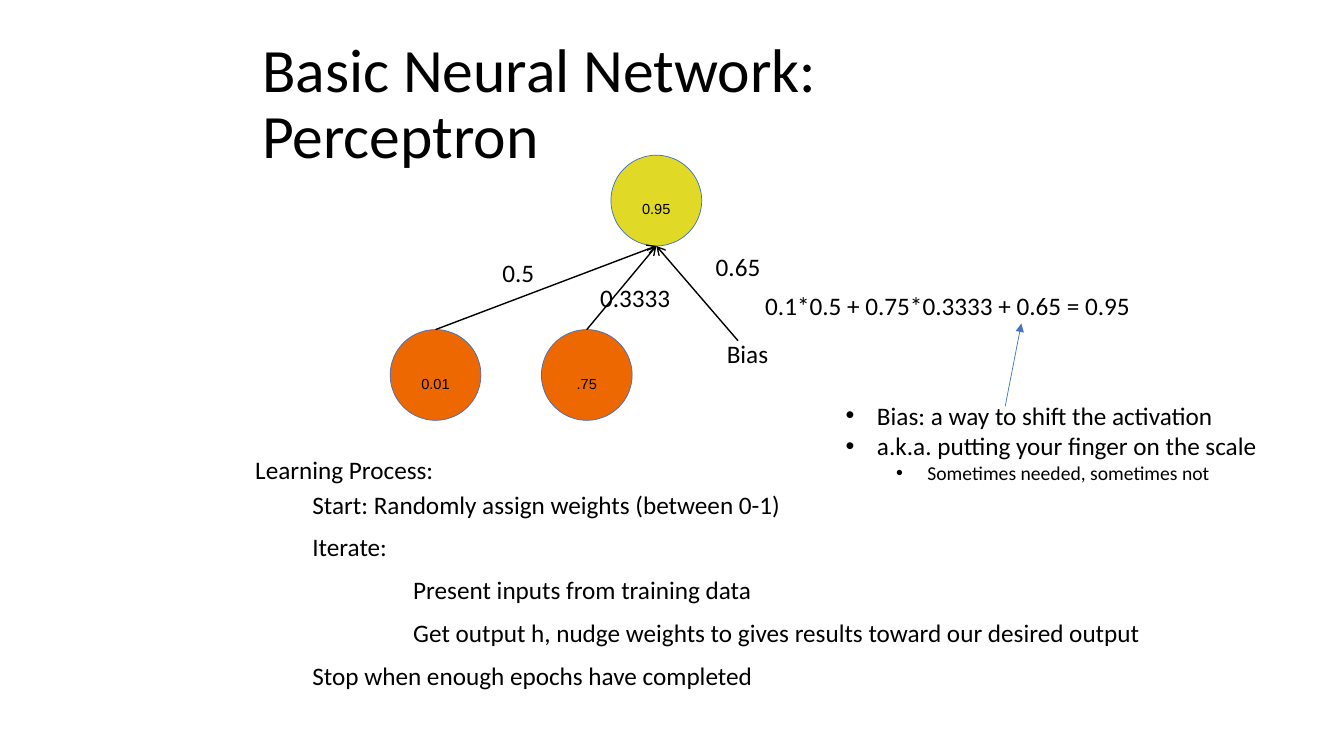
"""Build the perceptron slide: a small network, its bias note and the learning steps."""
from typing import NamedTuple

from lxml.etree import SubElement
from pptx import Presentation
from pptx.dml.color import RGBColor
from pptx.enum.shapes import MSO_CONNECTOR as Connector, MSO_SHAPE as Preset
from pptx.enum.text import MSO_ANCHOR as Anchor, PP_ALIGN as Align
from pptx.oxml.ns import qn
from pptx.util import Inches, Pt

BLACK, ORANGE, YELLOW = "000000", "EE6802", "E0D925"
DIAMETER = 0.9
OUTPUT_TIP = (6.51, 2.44)


class Line(NamedTuple):
    text: str
    size: float = 18
    indent: float = 0
    level: int = 0
    space_before: float = 0
    bullet: bool = False


class Label(NamedTuple):
    left: float
    top: float
    width: float
    height: float
    lines: list[Line]
    align: Align = Align.CENTER
    anchor: Anchor = Anchor.MIDDLE
    wrap: bool = False


class Neuron(NamedTuple):
    left: float
    top: float
    value: str
    fill: str


class Arrow(NamedTuple):
    start: tuple[float, float]
    end: tuple[float, float]
    color: str = BLACK
    width: float = 1
    head: str = "arrow"


LABELS = [
    Label(4.88, 2.5, 0.52, 0.4, [Line("0.5")]),
    Label(5.85, 2.75, 0.9, 0.4, [Line("0.3333")]),
    Label(6.87, 2.44, 0.9, 0.4, [Line("0.65")], wrap=True),
    Label(7.47, 2.83, 3.86, 0.4, [Line("0.1*0.5 + 0.75*0.3333 + 0.65 = 0.95")]),
    Label(7.11, 3.31, 0.62, 0.4, [Line("Bias")], Align.LEFT, Anchor.TOP),
    Label(2.42, 4.46, 1.99, 0.4, [Line("Learning Process:")]),
    Label(3, 4.74, 9.55, 2.22, [
        Line("Start: Randomly assign weights (between 0-1)"),
        Line("Iterate:", space_before=9),
        Line("Present inputs from training data", indent=1, space_before=9),
        Line("Get output h, nudge weights to gives results toward our desired output",
             indent=1, space_before=9),
        Line("Stop when enough epochs have completed", space_before=9),
    ], Align.LEFT, wrap=True),
    Label(8.29, 3.92, 4.33, 1.25, [
        Line("Bias: a way to shift the activation", indent=0.31, bullet=True),
        Line("a.k.a. putting your finger on the scale", indent=0.31, bullet=True),
        Line("Sometimes needed, sometimes not", 14, 0.81, 1, bullet=True),
    ], Align.LEFT, Anchor.TOP),
]
NEURONS = [
    Neuron(3.87, 3.27, "0.01", ORANGE),
    Neuron(6.06, 1.54, "0.95", YELLOW),
    Neuron(5.37, 3.27, ".75", ORANGE),
]
ARROWS = [
    Arrow((9.97, 4.03), (10.13, 3.21), "4472C4", 0.5, "triangle"),
    Arrow((4.32, 3.27), OUTPUT_TIP),
    Arrow((5.82, 3.27), OUTPUT_TIP),
    Arrow((7.32, 3.38), OUTPUT_TIP),
]


def color(value: str) -> RGBColor:
    """Turn a hex string into a colour."""
    return RGBColor.from_string(value)


def set_attributes(target, values: dict) -> None:
    """Set every named attribute on the target."""
    for name, value in values.items():
        setattr(target, name, value)


def add_run(paragraph, text: str, size: float, font: str = "Calibri"):
    """Add black text to a paragraph."""
    run = paragraph.add_run()
    run.text = text
    set_attributes(run.font, {"name": font, "size": Pt(size)})
    run.font.color.rgb = color(BLACK)
    return run


def add_title(slide, text: str) -> None:
    """Place and format the title placeholder."""
    title = slide.shapes.title
    set_attributes(title, {"left": Inches(2.5), "top": Inches(0.42),
                           "width": Inches(8.5), "height": Inches(1.25)})
    set_attributes(title.text_frame, {"word_wrap": True, "vertical_anchor": Anchor.MIDDLE})
    paragraph = title.text_frame.paragraphs[0]
    set_attributes(paragraph, {"alignment": Align.LEFT, "line_spacing": 0.9})
    add_run(paragraph, text, 44)


def add_label(slide, label: Label) -> None:
    """Draw a text box with its lines."""
    shape = slide.shapes.add_textbox(*map(Inches, label[:4]))
    frame = shape.text_frame
    set_attributes(frame, {"word_wrap": label.wrap, "vertical_anchor": label.anchor})
    for index, line in enumerate(label.lines):
        paragraph = frame.add_paragraph() if index else frame.paragraphs[0]
        set_attributes(paragraph, {"alignment": label.align, "level": line.level})
        if line.space_before:
            paragraph.space_before = Pt(line.space_before)
        properties = paragraph._p.get_or_add_pPr()
        if line.indent:
            properties.set("marL", str(Inches(line.indent)))
        if line.bullet:
            properties.set("indent", str(Inches(-0.31)))
            SubElement(properties, qn("a:buFont"), typeface="Arial")
            SubElement(properties, qn("a:buChar"), char="•")
        add_run(paragraph, line.text, line.size)


def add_neuron(slide, neuron: Neuron) -> None:
    """Draw a circle with its value set as a subscript."""
    shape = slide.shapes.add_shape(
        Preset.FLOWCHART_CONNECTOR, Inches(neuron.left), Inches(neuron.top),
        Inches(DIAMETER), Inches(DIAMETER))
    shape.shadow.inherit = False
    shape.fill.solid()
    shape.fill.fore_color.rgb = color(neuron.fill)
    shape.line.color.rgb = color("3F6FC3")
    shape.line.width = Pt(0.5)
    shape.text_frame.vertical_anchor = Anchor.MIDDLE
    paragraph = shape.text_frame.paragraphs[0]
    paragraph.alignment = Align.CENTER
    run = add_run(paragraph, neuron.value, 18, "Arial")
    run._r.get_or_add_rPr().set("baseline", "-25000")


def add_arrow(slide, arrow: Arrow) -> None:
    """Draw a straight line with an arrowhead at its end."""
    connector = slide.shapes.add_connector(
        Connector.STRAIGHT, *map(Inches, arrow.start + arrow.end))
    connector.line.color.rgb = color(arrow.color)
    connector.line.width = Pt(arrow.width)
    SubElement(connector.line._get_or_add_ln(), qn("a:tailEnd"), type=arrow.head)
    SubElement(connector._element.spPr, qn("a:effectLst"))


def main() -> None:
    """Build and save the slide."""
    presentation = Presentation()
    set_attributes(presentation, {"slide_width": Inches(13.33), "slide_height": Inches(7.5)})
    slide = presentation.slides.add_slide(presentation.slide_layouts[5])
    add_title(slide, "Basic Neural Network: Perceptron")
    for label in LABELS:
        add_label(slide, label)
    for neuron in NEURONS:
        add_neuron(slide, neuron)
    for arrow in ARROWS:
        add_arrow(slide, arrow)
    presentation.save("out.pptx")


if __name__ == "__main__":
    main()
